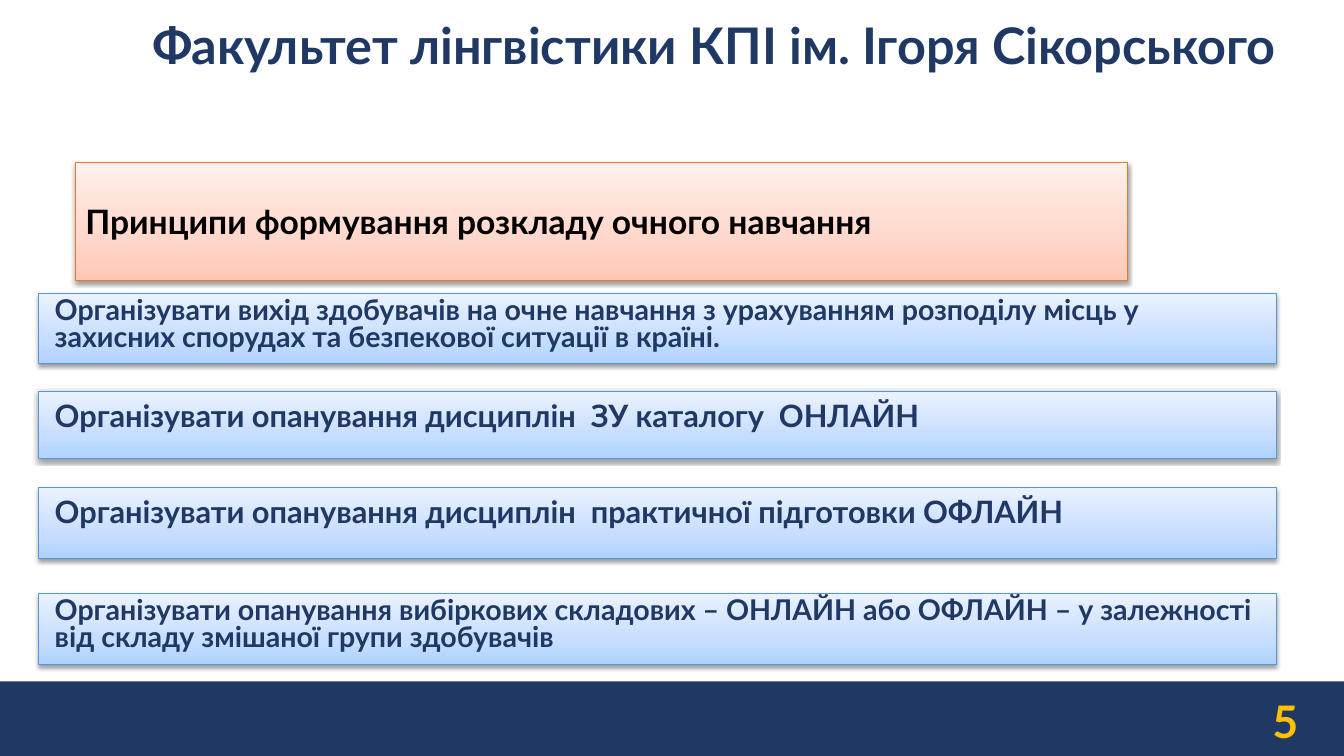
from copy import deepcopy
from dataclasses import dataclass

from lxml.etree import SubElement
from pptx import Presentation
from pptx.dml.color import RGBColor
from pptx.enum.shapes import MSO_SHAPE
from pptx.enum.text import MSO_ANCHOR, MSO_AUTO_SIZE, PP_ALIGN
from pptx.oxml.ns import qn
from pptx.util import Cm, Pt


@dataclass(frozen=True)
class Theme:
    font: str = "Lato"
    navy: str = "1F3864"
    gold: str = "FFC000"
    black: str = "000000"
    white: str = "FFFFFF"
    blue_line: str = "5698D3"
    orange_line: str = "EC792B"
    blue_stops: tuple = ("B0D2FF", "C7DEFF", "EAF2FF")
    orange_stops: tuple = ("FFC7B6", "FFD7CB", "FFF0EB")
    stop_positions: tuple = (0, 0.35, 1)
    title_size: float = 36
    number_size: float = 32
    heading_size: float = 24
    single_size: float = 22
    double_size: float = 20.4


THEME = Theme()
PRINCIPLES = [
    (7.39, 1.78, THEME.double_size, 0.8,
     "Організувати вихід здобувачів на очне навчання з урахуванням розподілу місць "
     "у захисних спорудах та безпекової ситуації в країні."),
    (9.86, 1.7, THEME.single_size, 1,
     "Організувати опанування дисциплін  ЗУ каталогу  ОНЛАЙН"),
    (12.29, 1.78, THEME.single_size, 1,
     "Організувати опанування дисциплін  практичної підготовки ОФЛАЙН"),
    (14.96, 1.78, THEME.double_size, 0.8,
     "Організувати опанування вибіркових складових – ОНЛАЙН або ОФЛАЙН – "
     "у залежності від складу змішаної групи здобувачів"),
]


def color(value):
    return RGBColor.from_string(value)


def write(shape, text, size, ink, align=PP_ALIGN.LEFT, anchor=MSO_ANCHOR.TOP, spacing=1):
    frame = shape.text_frame
    frame.word_wrap = True
    frame.auto_size = MSO_AUTO_SIZE.NONE
    frame.vertical_anchor = anchor
    para = frame.paragraphs[0]
    para.alignment = align
    para.line_spacing = spacing
    para.space_before = Pt(0)
    span = para.add_run()
    span.text = text
    span.font.name = THEME.font
    span.font.size = Pt(size)
    span.font.bold = True
    span.font.color.rgb = color(ink)
    return para


def add_panel(page, box, stops, line):
    panel = page.shapes.add_shape(MSO_SHAPE.RECTANGLE, *map(Cm, box))
    panel.fill.gradient()
    panel.fill.gradient_angle = 90
    first = panel._element.spPr.find(".//" + qn("a:gs"))
    first.addnext(deepcopy(first))
    for stop, value, position in zip(panel.fill.gradient_stops, stops, THEME.stop_positions):
        stop.color.rgb = color(value)
        stop.position = position
    panel.line.color.rgb = color(line)
    panel.line.width = Pt(0.75)
    panel.shadow.inherit = False
    effects = panel._element.spPr.find(qn("a:effectLst"))
    shadow = SubElement(effects, qn("a:outerShdw"), blurRad="40000", dist="20000",
                        dir="5400000", rotWithShape="0")
    tint = SubElement(shadow, qn("a:srgbClr"), val=THEME.black)
    SubElement(tint, qn("a:alpha"), val="38000")
    return panel


def add_title(page, box):
    title = page.shapes.title
    title.left, title.top, title.width, title.height = map(Cm, box)
    write(title, "Факультет лінгвістики КПІ ім. Ігоря Сікорського",
          THEME.title_size, THEME.navy, spacing=0.9)


def add_footer(page, box):
    left, top, width, height = box
    band = page.shapes.add_shape(MSO_SHAPE.RECTANGLE, *map(Cm, box))
    band.shadow.inherit = False
    band.fill.solid()
    band.fill.fore_color.rgb = color(THEME.navy)
    band.line.fill.background()
    number = page.shapes.add_textbox(
        Cm(left + width - 3.26), Cm(top + 0.48), Cm(2.36), Cm(1.02))
    write(number, "5", THEME.number_size, THEME.gold, PP_ALIGN.RIGHT, MSO_ANCHOR.MIDDLE)


def add_heading(page, box):
    panel = add_panel(page, box, THEME.orange_stops, THEME.orange_line)
    write(panel, "Принципи формування розкладу очного навчання",
          THEME.heading_size, THEME.black, PP_ALIGN.JUSTIFY, MSO_ANCHOR.MIDDLE)


def add_principles(page, left, width):
    for top, height, size, spacing, text in PRINCIPLES:
        panel = add_panel(page, (left, top, width, height), THEME.blue_stops, THEME.blue_line)
        para = write(panel, text, size, THEME.navy, spacing=spacing)
        para._p.get_or_add_pPr().set("marL", str(Cm(0.16)))


def main():
    deck = Presentation()
    deck.slide_width, deck.slide_height = Cm(33.87), Cm(19.05)
    page = deck.slides.add_slide(deck.slide_layouts[5])
    page.background.fill.solid()
    page.background.fill.fore_color.rgb = color(THEME.white)
    add_footer(page, (0, 17.17, 33.87, 1.88))
    add_title(page, (3.58, 0.41, 29.62, 3.68))
    add_heading(page, (1.9, 4.09, 26.52, 2.97))
    add_principles(page, 0.97, 31.19)
    deck.save("out.pptx")


if __name__ == "__main__":
    main()
